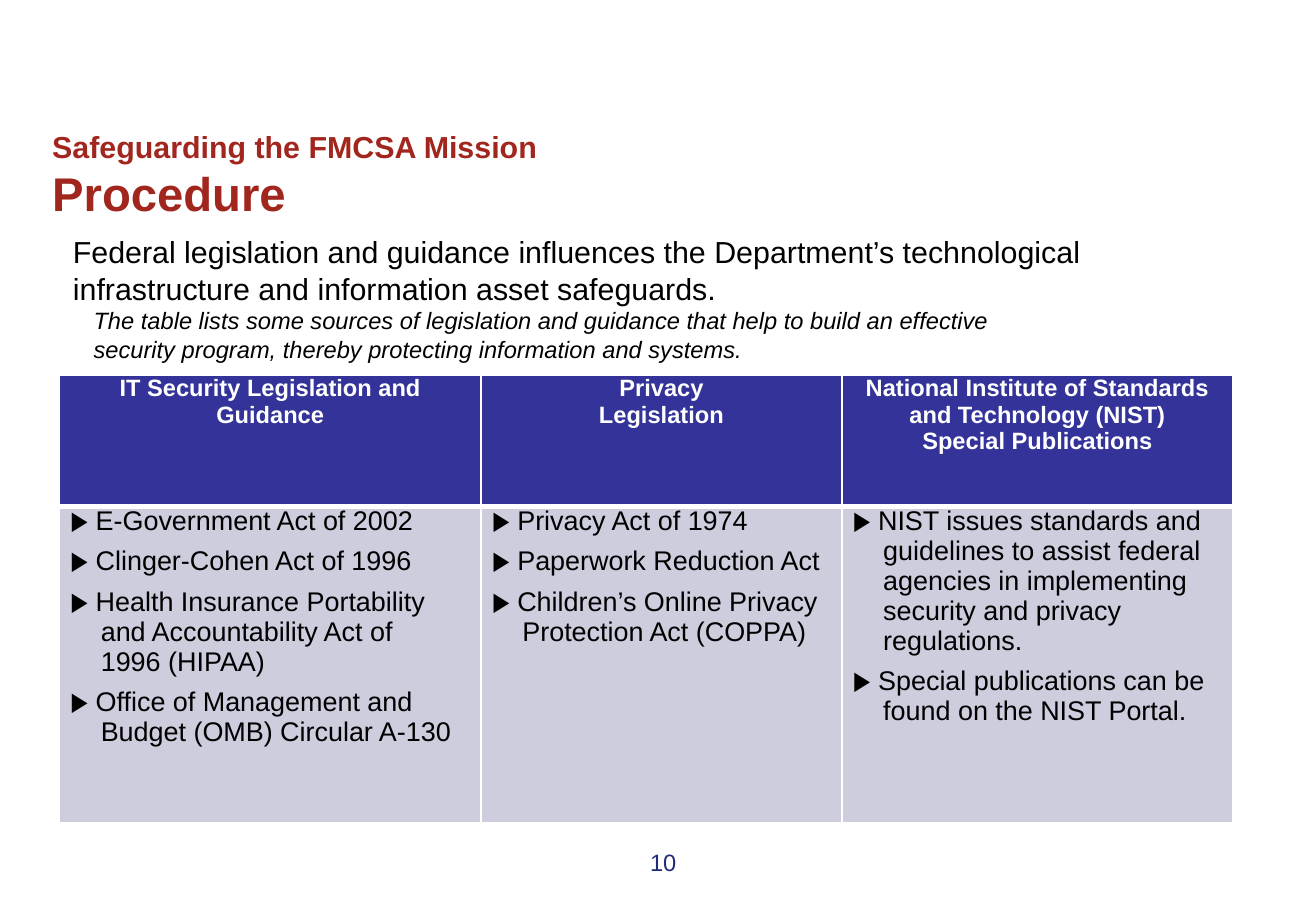
from dataclasses import dataclass

import lxml.etree
import pptx
import pptx.dml.color
import pptx.enum.text
import pptx.oxml.ns
import pptx.util

ALIGN = pptx.enum.text.PP_ALIGN


@dataclass(frozen=True)
class Theme:
    font: str = "Arial"
    red: str = "A1261E"
    navy: str = "1F2A7B"
    header: str = "333399"
    cell: str = "CDCDDE"
    black: str = "000000"
    white: str = "FFFFFF"
    heading: int = 28
    lead: int = 18
    item: int = 16
    small: int = 14
    thin: int = 1
    thick: int = 3


@dataclass(frozen=True)
class Area:
    """A rectangle in percent of the slide's width and height."""
    left: float
    top: float
    width: float
    height: float


@dataclass(frozen=True)
class Column:
    width: float
    heading: str
    items: tuple[str, ...]


THEME = Theme()
SLIDE_WIDTH = pptx.util.Inches(10.83)
SLIDE_HEIGHT = pptx.util.Inches(7.5)

TITLE_AREA = Area(3.97, 13.47, 92.24, 10.8)
INTRO_AREA = Area(5.54, 25.6, 78.49, 13.47)
NUMBER_AREA = Area(49.4, 93.07, 2.49, 2.93)
TABLE_LEFT, TABLE_TOP = 4.52, 41.2
ROW_HEIGHTS = (14.4, 34.67)

# Item indents, in percent of the slide's width
ITEM_INDENT, ITEM_HANG = 3.14, -2.31

COLUMNS = (
    Column(32.04, "IT Security Legislation and\vGuidance", (
        "E-Government Act of 2002",
        "Clinger-Cohen Act of 1996",
        "Health Insurance Portability\vand Accountability Act of\v1996 (HIPAA)",
        "Office of Management and\vBudget (OMB) Circular A-130",
    )),
    Column(27.42, "Privacy\vLegislation", (
        "Privacy Act of 1974",
        "Paperwork Reduction Act",
        "Children’s Online Privacy Protection Act (COPPA)",
    )),
    Column(29.73, "National Institute of Standards\vand Technology (NIST)\vSpecial Publications", (
        "NIST issues standards and guidelines to assist federal agencies "
        "in implementing security and privacy regulations.",
        "Special publications can be found on the NIST Portal.",
    )),
)


def across(share: float) -> int:
    return round(SLIDE_WIDTH * share / 100)


def down(share: float) -> int:
    return round(SLIDE_HEIGHT * share / 100)


def bounds(area: Area) -> tuple[int, int, int, int]:
    return across(area.left), down(area.top), across(area.width), down(area.height)


def add_text(frame, text: str, *, size: float, color: str, bold: bool = False,
             italic: bool = False, align=ALIGN.LEFT, indent: float = 0,
             hang: float = 0, before: float = 0, leading: float = 0) -> None:
    """Add one paragraph, using the frame's first one while it is empty."""
    first = frame.paragraphs[0]
    para = frame.add_paragraph() if first.text else first
    para.text = text
    para.alignment = align
    para.space_before = pptx.util.Pt(before)
    para.line_spacing = pptx.util.Pt(leading) if leading else 1.0
    properties = para._p.get_or_add_pPr()
    properties.set("marL", str(across(indent)))
    properties.set("indent", str(across(hang)))
    lxml.etree.SubElement(properties, pptx.oxml.ns.qn("a:buNone"))
    for span in para.runs:
        span.font.name = THEME.font
        span.font.size = pptx.util.Pt(size)
        span.font.bold = bold
        span.font.italic = italic
        span.font.color.rgb = pptx.dml.color.RGBColor.from_string(color)


def prepare_box(box, area: Area, top_inset: float = 0):
    box.left, box.top, box.width, box.height = bounds(area)
    frame = box.text_frame
    frame.word_wrap = True
    frame.auto_size = pptx.enum.text.MSO_AUTO_SIZE.NONE
    frame.vertical_anchor = pptx.enum.text.MSO_ANCHOR.TOP
    frame.margin_left = frame.margin_right = frame.margin_bottom = 0
    frame.margin_top = down(top_inset)
    return frame


def format_cell(cell, fill: str, top: int, bottom: int) -> None:
    cell.margin_left = cell.margin_right = cell.margin_top = cell.margin_bottom = 0
    properties = cell._tc.get_or_add_tcPr()
    widths = {"lnL": THEME.thin, "lnR": THEME.thin, "lnT": top, "lnB": bottom}
    for side, width in widths.items():
        line = lxml.etree.SubElement(properties, pptx.oxml.ns.qn(f"a:{side}"),
                                     w=str(pptx.util.Pt(width)))
        solid = lxml.etree.SubElement(line, pptx.oxml.ns.qn("a:solidFill"))
        lxml.etree.SubElement(solid, pptx.oxml.ns.qn("a:srgbClr"), val=THEME.white)
    cell.fill.solid()
    cell.fill.fore_color.rgb = pptx.dml.color.RGBColor.from_string(fill)


def add_sources_table(page) -> None:
    area = Area(TABLE_LEFT, TABLE_TOP, sum(column.width for column in COLUMNS), sum(ROW_HEIGHTS))
    table = page.shapes.add_table(len(ROW_HEIGHTS), len(COLUMNS), *bounds(area)).table
    table.horz_banding = False
    for row, height in zip(table.rows, ROW_HEIGHTS):
        row.height = down(height)
    for index, column in enumerate(COLUMNS):
        table.columns[index].width = across(column.width)
        header, body = table.cell(0, index), table.cell(1, index)
        format_cell(header, THEME.header, THEME.thin, THEME.thick)
        format_cell(body, THEME.cell, THEME.thick, THEME.thin)
        add_text(header.text_frame, column.heading, size=THEME.small,
                 color=THEME.white, bold=True, align=ALIGN.CENTER)
        for position, item in enumerate(column.items):
            add_text(body.text_frame, f"▶ {item}", size=THEME.item, color=THEME.black,
                     indent=ITEM_INDENT, hang=ITEM_HANG, before=6 if position else 0)


def main() -> None:
    deck = pptx.Presentation()
    deck.slide_width, deck.slide_height = SLIDE_WIDTH, SLIDE_HEIGHT
    page = deck.slides.add_slide(deck.slide_layouts.get_by_name("Title and Content"))

    # Title
    title = prepare_box(page.shapes.title, TITLE_AREA, top_inset=0.67)
    add_text(title, "Safeguarding the FMCSA Mission", size=THEME.lead,
             color=THEME.red, bold=True, leading=21.4)
    add_text(title, "Procedure", size=THEME.heading, color=THEME.red, bold=True, leading=33.1)

    # Introduction
    intro = prepare_box(page.placeholders[1], INTRO_AREA)
    add_text(intro, "Federal legislation and guidance influences the Department’s "
             "technological infrastructure and information asset safeguards.",
             size=THEME.lead, color=THEME.black)
    add_text(intro, "The table lists some sources of legislation and guidance that help to "
             "build an effective\vsecurity program, thereby protecting information and systems.",
             size=THEME.small, color=THEME.black, italic=True, indent=1.57, leading=16.8)

    # Table of sources
    add_sources_table(page)

    # Page number
    number = prepare_box(page.shapes.add_textbox(*bounds(NUMBER_AREA)), NUMBER_AREA)
    add_text(number, "10", size=THEME.small, color=THEME.navy)

    deck.save("out.pptx")


if __name__ == "__main__":
    main()
